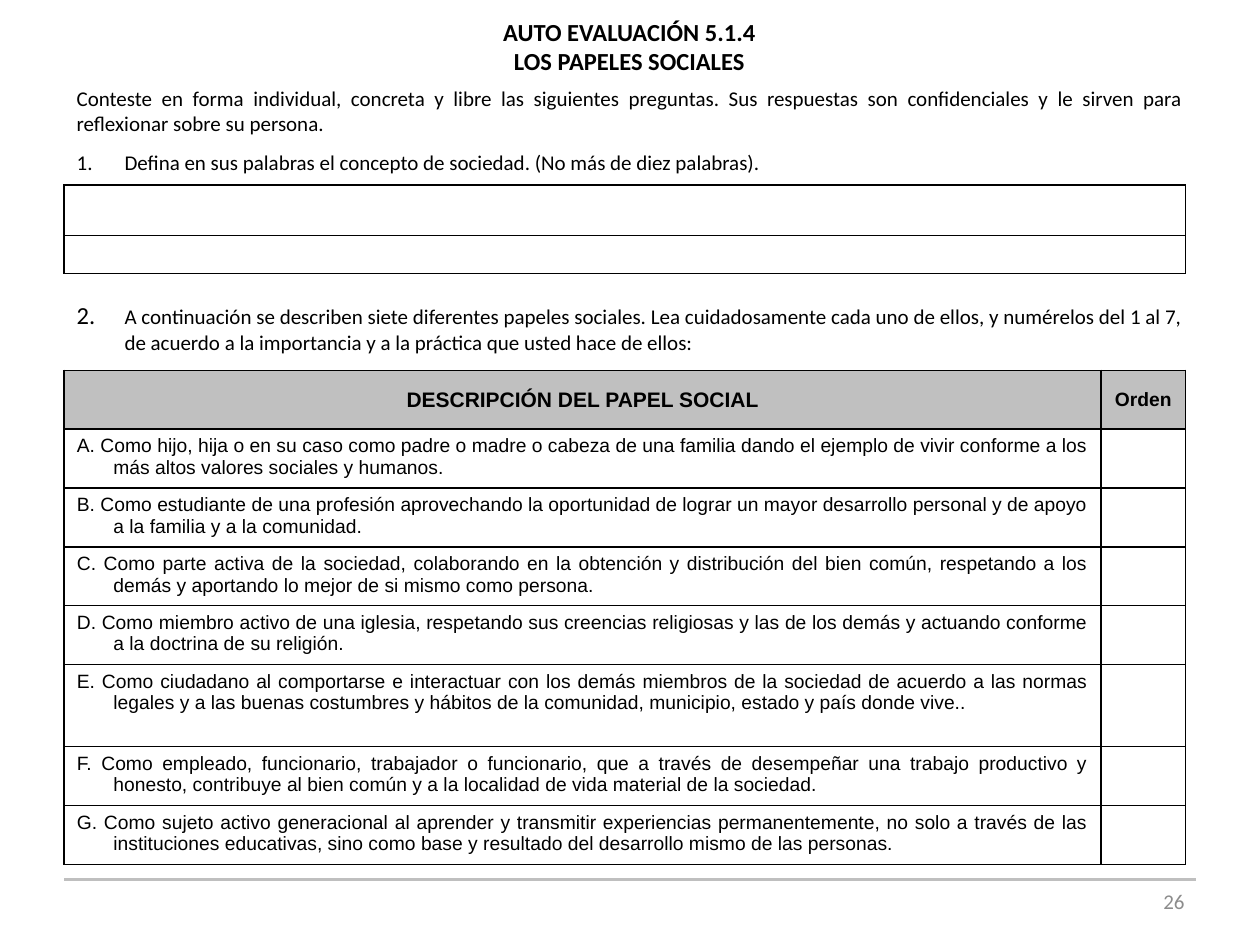
from lxml import etree
from pptx import Presentation
from pptx.dml.color import RGBColor
from pptx.enum import shapes, text
from pptx.oxml.ns import qn
from pptx.util import Inches, Pt

BLACK = RGBColor(0, 0, 0)
HEADER_FILL = RGBColor(0xC0, 0xC0, 0xC0)
RULE = RGBColor(0xBF, 0xBF, 0xBF)
PAGE_GRAY = RGBColor(0x8C, 0x8C, 0x8C)
LEFT, CENTER, RIGHT, JUSTIFY = (text.PP_ALIGN.LEFT, text.PP_ALIGN.CENTER,
                                text.PP_ALIGN.RIGHT, text.PP_ALIGN.JUSTIFY)
TOP, MIDDLE = text.MSO_ANCHOR.TOP, text.MSO_ANCHOR.MIDDLE

# Content
TITLE = ["AUTO EVALUACIÓN 5.1.4", "LOS PAPELES SOCIALES"]
INTRO = ("Conteste en forma individual, concreta y libre las siguientes preguntas. "
         "Sus respuestas son confidenciales y le sirven para reflexionar sobre su persona.")
QUESTION_1 = [("1.\t", 12), ("Defina en sus palabras el concepto de sociedad. "
                             "(No más de diez palabras).", 12)]
QUESTION_2 = [("2.\t", 14), ("A continuación se describen siete diferentes papeles sociales. "
                             "Lea cuidadosamente cada uno de ellos, y numérelos del 1 al 7, de "
                             "acuerdo a la importancia y a la práctica que usted hace de ellos:", 12)]
HEADERS = [("DESCRIPCIÓN DEL PAPEL SOCIAL", 12), ("Orden", 11)]
ROLES = [
    "A. Como hijo, hija o en su caso como padre o madre o cabeza de una familia dando "
    "el ejemplo de vivir conforme a los más altos valores sociales y humanos.",
    "B. Como estudiante de una profesión aprovechando la oportunidad de lograr un mayor "
    "desarrollo personal y de apoyo a la familia y a la comunidad.",
    "C. Como parte activa de la sociedad, colaborando en la obtención y distribución del bien "
    "común, respetando a los demás y aportando lo mejor de si mismo como persona.",
    "D. Como miembro activo de una iglesia, respetando sus creencias religiosas y las de los "
    "demás y actuando conforme a la doctrina de su religión.",
    "E. Como ciudadano al comportarse e interactuar con los demás miembros de la sociedad de "
    "acuerdo a las normas legales y a las buenas costumbres y hábitos de la comunidad, "
    "municipio, estado y país donde vive..",
    "F. Como empleado, funcionario, trabajador o funcionario, que a través de desempeñar una "
    "trabajo productivo y honesto, contribuye al bien común y a la localidad de vida material "
    "de la sociedad.",
    "G. Como sujeto activo generacional al aprender y transmitir experiencias permanentemente, "
    "no solo a través de las instituciones educativas, sino como base y resultado del "
    "desarrollo mismo de las personas.",
]
PAGE = "26"

# Layout, in inches
MARGIN = 0.51
TABLE_W = 8.9
ORDER_W = 0.67
ROLES_H = 3.91
TALL_ROW, TALL_H = 5, 0.65
ROW_H = (ROLES_H - TALL_H) / len(ROLES)


def write(tf, paragraphs, size=12, font="Calibri", color=BLACK, bold=False,
          align=LEFT, hang=0):
    """Each paragraph is a string or a list of (text, size) runs."""
    for i, content in enumerate(paragraphs):
        p = tf.paragraphs[0] if i == 0 else tf.add_paragraph()
        p.alignment = align
        if hang:
            pPr = p._p.get_or_add_pPr()
            pPr.set("marL", str(Inches(hang)))
            pPr.set("indent", str(-Inches(hang)))
        runs = [(content, size)] if isinstance(content, str) else content
        for words, run_size in runs:
            r = p.add_run()
            r.text = words
            r.font.size = Pt(run_size)
            r.font.name = font
            r.font.bold = bold
            r.font.color.rgb = color


def add_text(s, x, y, w, h, paragraphs, anchor=TOP, grow=True, **fmt):
    tf = s.shapes.add_textbox(Inches(x), Inches(y), Inches(w), Inches(h)).text_frame
    tf.word_wrap = True
    tf.vertical_anchor = anchor
    if grow:
        tf.auto_size = text.MSO_AUTO_SIZE.SHAPE_TO_FIT_TEXT
    write(tf, paragraphs, **fmt)


def style_cell(cell):
    """Clear the fill, draw black borders and keep empty cells low."""
    cell.fill.background()
    tcPr = cell._tc.get_or_add_tcPr()
    for i, side in enumerate(("lnL", "lnR", "lnT", "lnB")):
        ln = etree.Element(qn("a:" + side), w=str(Pt(1)))
        fill = etree.SubElement(ln, qn("a:solidFill"))
        etree.SubElement(fill, qn("a:srgbClr"), val=str(BLACK))
        tcPr.insert(i, ln)
    p = cell.text_frame.paragraphs[0]._p
    etree.SubElement(p, qn("a:endParaRPr"), sz="1100")


def add_grid(s, y, cols, rows):
    table = s.shapes.add_table(len(rows), len(cols), Inches(MARGIN), Inches(y),
                               Inches(sum(cols)), Inches(sum(rows))).table
    table.first_row = table.horz_banding = False
    for column, width in zip(table.columns, cols):
        column.width = Inches(width)
    for row, height in zip(table.rows, rows):
        row.height = Inches(height)
        for cell in row.cells:
            style_cell(cell)
    return table


prs = Presentation()
prs.slide_width, prs.slide_height = Inches(10), Inches(7.5)
s = prs.slides.add_slide(prs.slide_layouts[6])

# Footer rule
rule = s.shapes.add_connector(shapes.MSO_CONNECTOR.STRAIGHT, Inches(MARGIN), Inches(6.98),
                              Inches(10 - MARGIN), Inches(6.98))
rule.line.color.rgb = RULE
rule.line.width = Pt(2)
etree.SubElement(rule._element.spPr, qn("a:effectLst"))

# Title, introduction and questions
add_text(s, 0.35, 0.08, 9.29, 0.57, TITLE, anchor=MIDDLE, size=14, bold=True, align=CENTER)
add_text(s, MARGIN, 0.63, 8.98, 0.5, [INTRO], anchor=MIDDLE, align=JUSTIFY)
add_text(s, MARGIN, 1.14, 9.21, 0.3, [QUESTION_1], align=JUSTIFY, hang=0.38)
add_text(s, MARGIN, 2.33, 8.98, 0.54, [QUESTION_2], align=JUSTIFY, hang=0.38)

# Answer lines for question 1
add_grid(s, 1.47, [TABLE_W], [0.4, 0.3])

# Social roles for question 2
heights = [TALL_H if i == TALL_ROW else ROW_H for i in range(len(ROLES) + 1)]
roles = add_grid(s, 2.94, [TABLE_W - ORDER_W, ORDER_W], heights)
for col, (label, size) in enumerate(HEADERS):
    cell = roles.cell(0, col)
    cell.fill.solid()
    cell.fill.fore_color.rgb = HEADER_FILL
    cell.vertical_anchor = MIDDLE
    write(cell.text_frame, [label], size=size, font="Arial", bold=True, align=CENTER)
for row, role in enumerate(ROLES, start=1):
    write(roles.cell(row, 0).text_frame, [role], size=11, font="Arial",
          align=JUSTIFY, hang=0.29)

# Page number
add_text(s, 7.17, 6.95, 2.33, 0.4, [PAGE], anchor=MIDDLE, grow=False,
         color=PAGE_GRAY, align=RIGHT)

prs.save("out.pptx")
